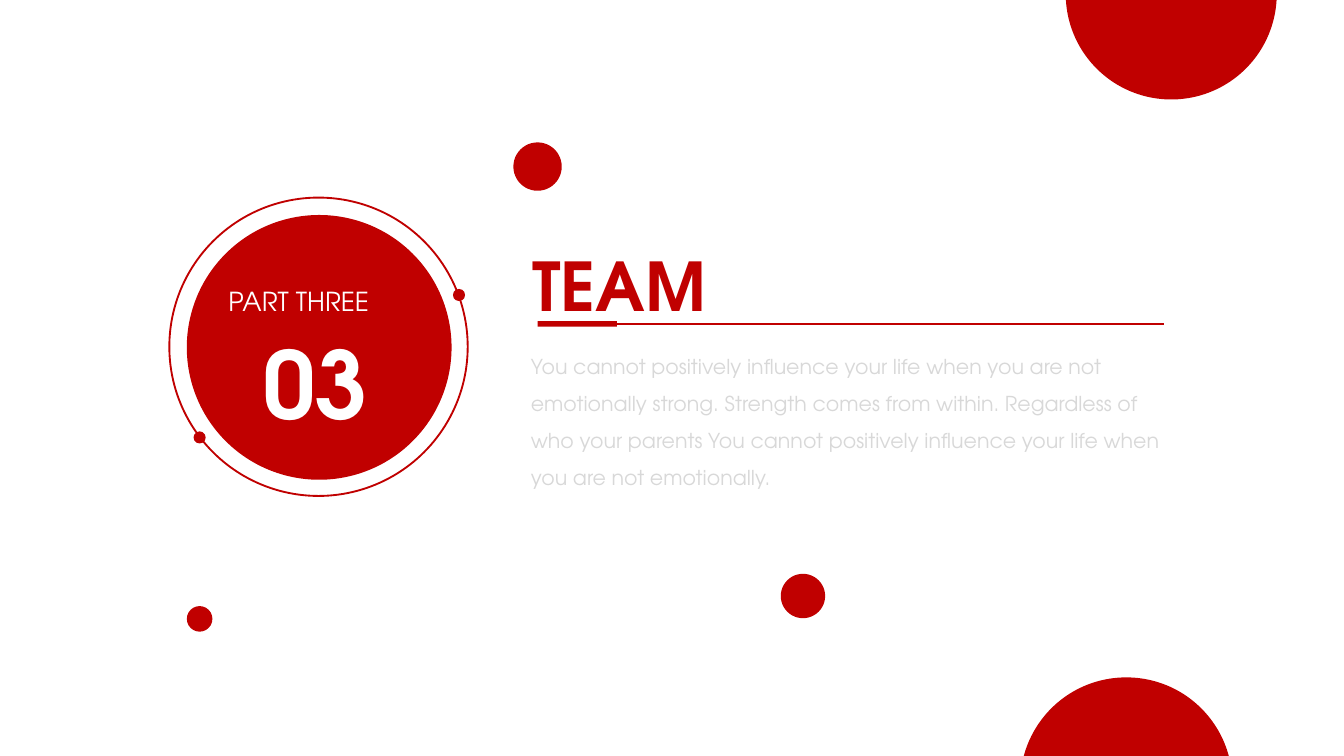
from dataclasses import dataclass

from lxml import etree
from pptx import Presentation
from pptx import util as u
from pptx.dml.color import RGBColor
from pptx.enum import shapes, text
from pptx.oxml.ns import qn

RED, WHITE, GREY = "C00000", "FFFFFF", "D8D8D8"
FONT = "TeX Gyre Adventor"


@dataclass
class Circle:
    left: float
    top: float
    size: float
    outlined: bool = False


@dataclass
class Label:
    left: float
    top: float
    width: float
    height: float
    words: str
    size: float
    color: str
    bold: bool = False
    align: text.PP_ALIGN = text.PP_ALIGN.JUSTIFY
    spacing: float = 1.0


BADGE = [
    Circle(1.39, 1.6, 1.97),
    Circle(3.37, 2.15, 0.09),
    Circle(1.26, 1.47, 2.22, outlined=True),
    Circle(1.44, 3.21, 0.09),
]
BUBBLES = [
    Circle(7.93, -0.83, 1.57),
    Circle(7.59, 5.04, 1.58),
    Circle(3.82, 1.06, 0.36),
    Circle(5.81, 4.27, 0.33),
    Circle(1.39, 4.51, 0.19),
]
LABELS = [
    Label(1.62, 2.08, 1.5, 0.31, "PART THREE ", 14, WHITE),
    Label(1.88, 2.39, 0.97, 0.91, "03", 50, WHITE, bold=True),
    Label(3.88, 1.78, 4.83, 0.68, "TEAM", 36, RED, bold=True),
    Label(
        3.87, 2.5, 4.93, 1.46,
        "You cannot positively influence your life when you are not emotionally strong. "
        "Strength comes from within. Regardless of who your parents You cannot positively "
        "influence your life when you are not emotionally.",
        11, GREY, align=text.PP_ALIGN.LEFT, spacing=1.5,
    ),
]


def paint(color_format, value: str) -> None:
    color_format.rgb = RGBColor.from_string(value)


def draw_solid(slide, kind, left: float, top: float, width: float, height: float):
    solid = slide.shapes.add_shape(
        kind, u.Inches(left), u.Inches(top), u.Inches(width), u.Inches(height)
    )
    solid.shadow.inherit = False
    solid.fill.solid()
    paint(solid.fill.fore_color, RED)
    solid.line.fill.background()
    return solid


def draw_circle(slide, circle: Circle) -> None:
    disc = draw_solid(
        slide, shapes.MSO_SHAPE.OVAL, circle.left, circle.top, circle.size, circle.size
    )
    if circle.outlined:
        disc.fill.background()
        paint(disc.line.color, RED)
        disc.line.width = u.Pt(1)


def draw_label(slide, label: Label) -> None:
    box = slide.shapes.add_textbox(
        u.Inches(label.left), u.Inches(label.top), u.Inches(label.width), u.Inches(label.height)
    )
    frame = box.text_frame
    frame.word_wrap = True
    frame.margin_left = frame.margin_right = u.Inches(0.08)
    frame.margin_top = frame.margin_bottom = u.Inches(0.04)
    paragraph = frame.paragraphs[0]
    paragraph.alignment = label.align
    paragraph.line_spacing = label.spacing
    run = paragraph.add_run()
    run.text = label.words
    run.font.name = FONT
    run.font.size = u.Pt(label.size)
    run.font.bold = label.bold
    paint(run.font.color, label.color)


def draw_underline(slide) -> None:
    draw_solid(slide, shapes.MSO_SHAPE.RECTANGLE, 4, 2.39, 0.59, 0.04)
    rule = slide.shapes.add_connector(
        shapes.MSO_CONNECTOR.STRAIGHT,
        u.Inches(4.56), u.Inches(2.41), u.Inches(8.66), u.Inches(2.41),
    )
    paint(rule.line.color, RED)
    rule.line.width = u.Pt(0.75)
    etree.SubElement(rule._element.spPr, qn("a:effectLst"))


def main() -> None:
    """Build the section slide for part three, the team."""
    deck = Presentation()
    deck.slide_width = u.Inches(10)
    deck.slide_height = u.Inches(10 * 9 / 16)
    slide = deck.slides.add_slide(deck.slide_layouts[6])
    for circle in BADGE:
        draw_circle(slide, circle)
    for label in LABELS:
        draw_label(slide, label)
    for circle in BUBBLES:
        draw_circle(slide, circle)
    draw_underline(slide)
    deck.save("out.pptx")


if __name__ == "__main__":
    main()
